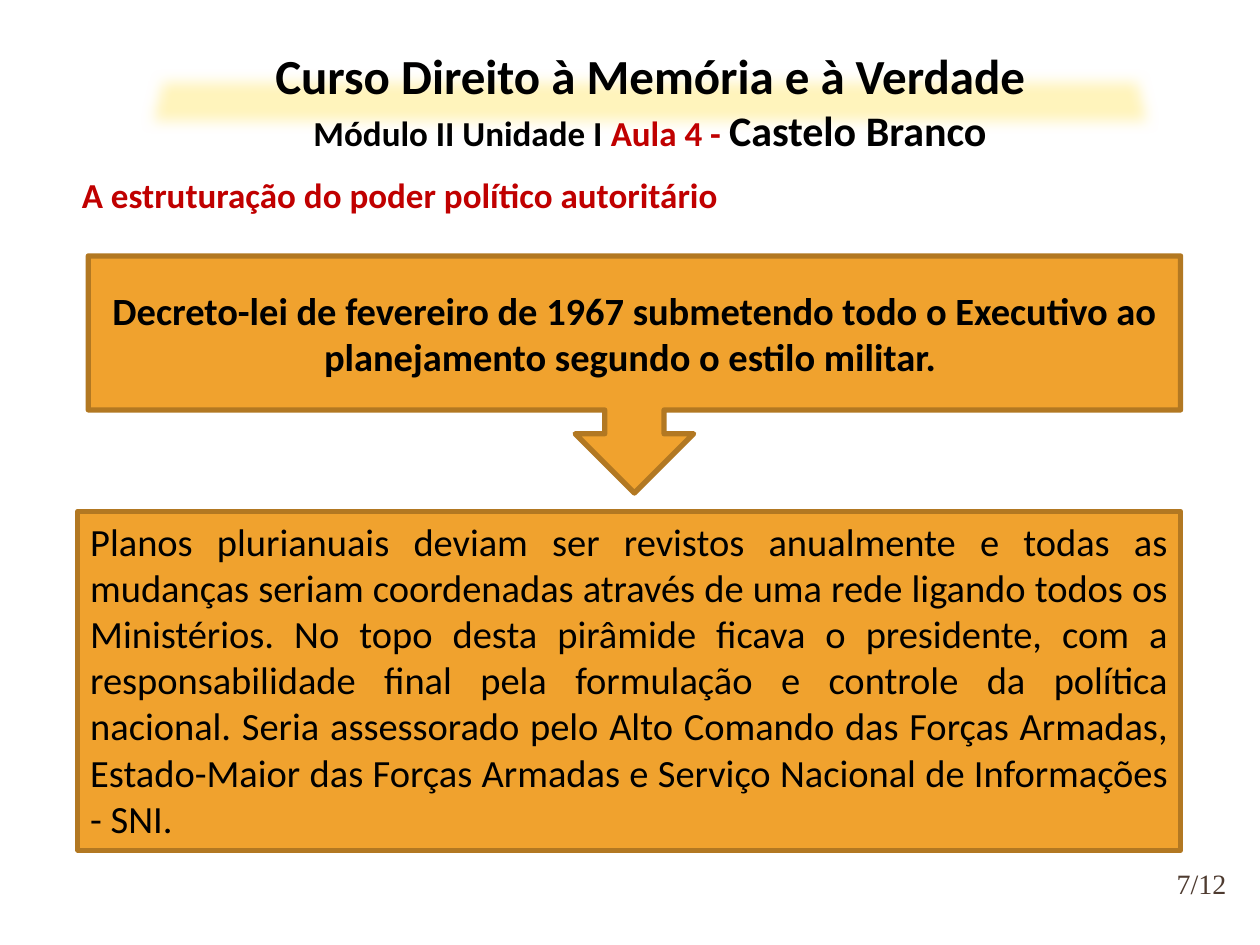
from lxml.etree import SubElement
from pptx import Presentation
from pptx.dml.color import RGBColor
from pptx.enum.shapes import MSO_SHAPE as Preset
from pptx.enum.text import MSO_ANCHOR as Anchor, PP_ALIGN as Align
from pptx.oxml.ns import qn
from pptx.util import Cm, Pt

BLACK, RED, BROWN = "000000", "C00000", "4E3B30"
ORANGE, DARK_ORANGE, PALE_YELLOW = "F0A22E", "B27822", "FFF4BC"


def color(hex_value):
    return RGBColor.from_string(hex_value)


def add_panel(slide, preset, box, fill, line=None):
    shape = slide.shapes.add_shape(preset, *map(Cm, box))
    shape.shadow.inherit = False
    shape.fill.solid()
    shape.fill.fore_color.rgb = color(fill)
    if line:
        shape.line.color.rgb = color(line)
        shape.line.width = Pt(3)
    else:
        shape.line.fill.background()
    return shape


def add_text_box(slide, box):
    return slide.shapes.add_textbox(*map(Cm, box))


def soften_edges(shape, radius):
    effects = shape._element.spPr.find(qn("a:effectLst"))
    SubElement(effects, qn("a:softEdge"), rad=str(int(radius)))


def write(shape, *paragraphs, size=22, font="Calibri", ink=BLACK, bold=False,
          align=Align.LEFT, anchor=Anchor.TOP, margin=None):
    """Each paragraph is a list of (text, overrides) runs."""
    frame = shape.text_frame
    frame.word_wrap = True
    frame.vertical_anchor = anchor
    if margin is not None:
        frame.margin_left = frame.margin_right = margin
        frame.margin_top = frame.margin_bottom = margin
    for index, runs in enumerate(paragraphs):
        paragraph = frame.add_paragraph() if index else frame.paragraphs[0]
        paragraph.alignment = align
        for text, overrides in runs:
            run = paragraph.add_run()
            run.text = text
            run.font.name = font
            run.font.size = Pt(overrides.get("size", size))
            run.font.bold = bold
            run.font.color.rgb = color(overrides.get("ink", ink))


def add_title(slide):
    band = add_panel(slide, Preset.TRAPEZOID, (2.7, 1.4, 20.8, 1.3), PALE_YELLOW)
    soften_edges(band, Pt(8))
    write(add_text_box(slide, (2.59, 0.79, 21.03, 2.49)),
          [("Curso Direito à Memória e à Verdade", {"size": 28})],
          [("Módulo II Unidade I ", {}),
           ("Aula 4 - ", {"ink": RED}),
           ("Castelo Branco", {"size": 24})],
          size=20, bold=True, align=Align.CENTER)


def main():
    presentation = Presentation()
    presentation.slide_width, presentation.slide_height = Cm(25.4), Cm(19.05)
    slide = presentation.slides.add_slide(presentation.slide_layouts[6])

    write(add_text_box(slide, (23.37, 17.17, 1.7, 1.27)), [("7/12", {})],
          size=16, font="Times New Roman", ink=BROWN, align=Align.CENTER,
          anchor=Anchor.MIDDLE, margin=0)
    write(add_text_box(slide, (1.4, 3.38, 17.48, 1.12)),
          [("A estruturação do poder político autoritário", {})],
          size=20, ink=RED, bold=True)

    plans = add_panel(slide, Preset.RECTANGLE, (1.57, 10.31, 22.23, 6.83),
                      ORANGE, DARK_ORANGE)
    write(plans, [(
        "Planos plurianuais deviam ser revistos anualmente e todas as mudanças "
        "seriam coordenadas através de uma rede ligando todos os Ministérios. "
        "No topo desta pirâmide ficava o presidente, com a responsabilidade "
        "final pela formulação e controle da política nacional. Seria "
        "assessorado pelo Alto Comando das Forças Armadas, Estado-Maior das "
        "Forças Armadas e Serviço Nacional de Informações - SNI. ", {})],
        align=Align.JUSTIFY)

    decree = add_panel(slide, Preset.DOWN_ARROW_CALLOUT,
                       (1.78, 5.16, 22.02, 4.78), ORANGE, DARK_ORANGE)
    write(decree, [(
        "Decreto-lei de fevereiro de 1967 submetendo todo o Executivo ao "
        "planejamento segundo o estilo militar. ", {})],
        bold=True, align=Align.CENTER, anchor=Anchor.MIDDLE)

    add_title(slide)
    presentation.save("out.pptx")


if __name__ == "__main__":
    main()
